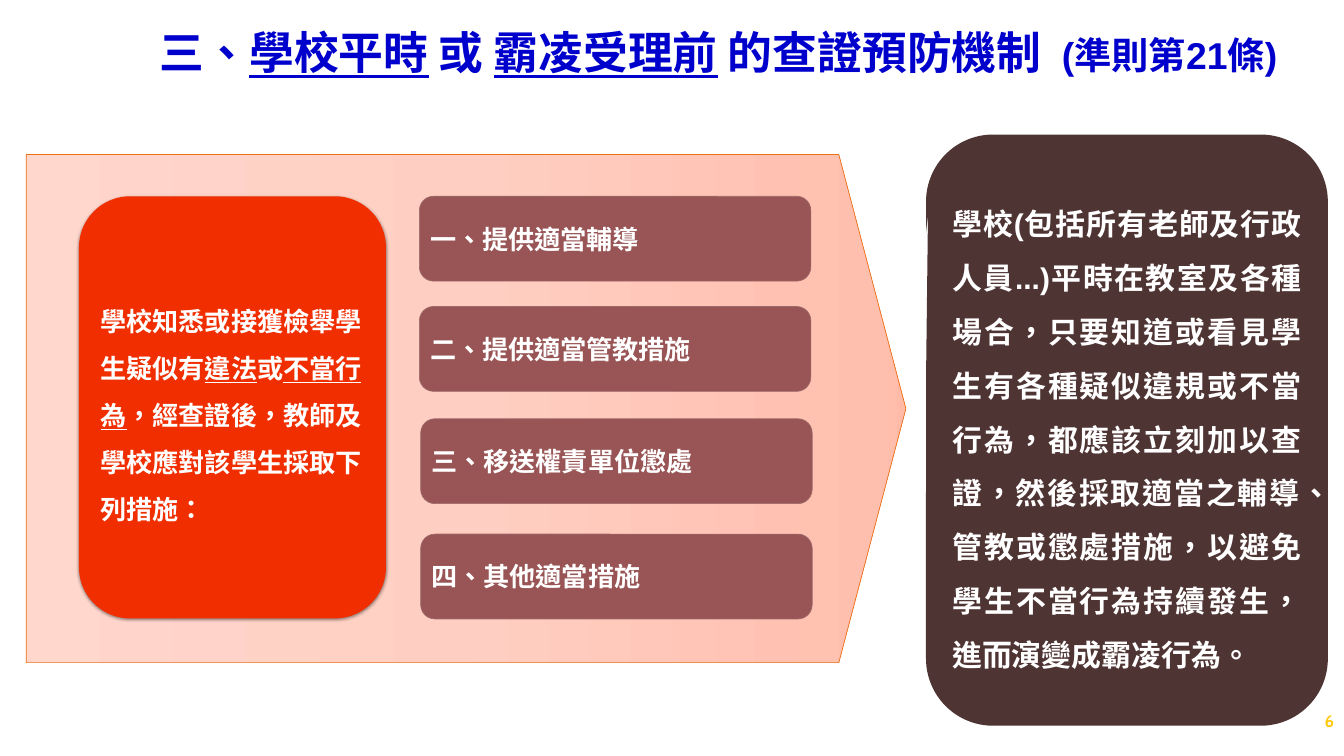
from pptx import Presentation
from pptx.dml.color import RGBColor as RGB
from pptx.enum.lang import MSO_LANGUAGE_ID as LANG
from pptx.enum.shapes import MSO_SHAPE as SHAPE
from pptx.enum.text import MSO_ANCHOR as ANCHOR, PP_ALIGN as ALIGN
from pptx.oxml import parse_xml
from pptx.oxml.ns import nsdecls
from pptx.util import Inches, Pt

WIDE, HIGH = 20, 11.25
WHITE = RGB(0xFF, 0xFF, 0xFF)
BLUE = RGB(0x00, 0x00, 0xCC)
GOLD = RGB(0xFF, 0xCA, 0x08)
ORANGE = RGB(0xEC, 0x70, 0x16)
RED = RGB(0xF0, 0x2E, 0x00)
ROSE = RGB(0x99, 0x55, 0x55)
EDGE = RGB(0x9C, 0x6A, 0x6A)
BROWN = RGB(0x4F, 0x34, 0x34)
PINKS = [(0, RGB(0xFF, 0xD7, 0xCD)), (50, RGB(0xFF, 0xCE, 0xC2)),
         (97, RGB(0xFF, 0xBF, 0xAE)), (100, RGB(0xFF, 0xBB, 0xA8))]

STEPS = ["一、提供適當輔導", "二、提供適當管教措施",
         "三、移送權責單位懲處", "四、其他適當措施"]


def part(box, x, y, w, h):
    """Return the box at the given shares of another box."""
    left, top, wide, high = box
    return left + x * wide, top + y * high, w * wide, h * high


def write(shape, runs, size=28, font="Cabin", color=WHITE,
          align=ALIGN.LEFT, space=None, before=0):
    """Fill a shape with one paragraph; a run is (text, own format)."""
    frame = shape.text_frame
    frame.word_wrap = True
    frame.vertical_anchor = ANCHOR.MIDDLE
    para = frame.paragraphs[0]
    para.alignment = align
    para.line_spacing = space
    para.space_before = Pt(before)
    for text, own in runs:
        run = para.add_run()
        run.text = text
        face = run.font
        face.name, face.bold = font, True
        face.size = Pt(own.get("size", size))
        face.underline = own.get("under", False)
        face.color.rgb = color
        face.language_id = LANG.TRADITIONAL_CHINESE


def add_text(slide, box, runs, **form):
    write(slide.shapes.add_textbox(*map(Inches, box)), runs, **form)


def add_box(slide, kind, box, fill=None, line=None, adjust=()):
    shape = slide.shapes.add_shape(kind, *map(Inches, box))
    shape.shadow.inherit = False
    for i, value in enumerate(adjust):
        shape.adjustments[i] = value
    if fill is not None:
        shape.fill.solid()
        shape.fill.fore_color.rgb = fill
    if line is None:
        shape.line.fill.background()
    else:
        shape.line.color.rgb = line
        shape.line.width = Pt(0.75)
    return shape


def shade(shape, stops):
    """Give a shape a gradient that runs from left to right."""
    shape.fill.gradient()
    shape.fill.gradient_angle = 0
    group = shape.fill._fill._gradFill.find(".//{*}gsLst")
    for old in list(group):
        group.remove(old)
    for pos, color in stops:
        group.append(parse_xml(
            f'<a:gs {nsdecls("a")} pos="{pos * 1000}">'
            f'<a:srgbClr val="{color}"/></a:gs>'))


def cast(shape):
    """Drop a soft shadow straight below a shape."""
    effect = shape._element.spPr.find("{*}effectLst")
    effect.append(parse_xml(
        f'<a:outerShdw {nsdecls("a")} blurRad="{Pt(3.5)}" dist="{Pt(1.1)}" '
        'dir="5400000" rotWithShape="0"><a:srgbClr val="000000">'
        '<a:alpha val="45000"/></a:srgbClr></a:outerShdw>'))


def add_title(slide, box):
    under = {"under": True}
    add_text(slide, box, [
        ("三、", {}), ("學校平時", under), (" 或 ", {}),
        ("霸凌受理前", under), (" 的查證預防機制  ", {}),
        ("(準則第21條)", {"size": 40})],
        size=48, font="Arial", color=BLUE, space=0.9)


def add_flow(slide, box):
    # Arrow behind the cause and the four steps
    arrow = add_box(slide, SHAPE.PENTAGON, box, line=ORANGE, adjust=[0.132])
    shade(arrow, PINKS)

    # Cause
    cause = add_box(slide, SHAPE.ROUNDED_RECTANGLE,
                    part(box, 0.06, 0.082, 0.349, 0.831), RED)
    cast(cause)
    under = {"under": True}
    write(cause, [
        ("學校知悉或接獲檢舉學生疑似有", {}), ("違法", under), ("或", {}),
        ("不當行為", under),
        ("，經查證後，教師及學校應對該學生採取下列措施：", {})], space=1.5)

    # Steps, the lower pair set slightly to the right
    spots = [(0.447, 0.082), (0.447, 0.299), (0.4485, 0.52), (0.4485, 0.747)]
    for text, (x, y) in zip(STEPS, spots):
        step = add_box(slide, SHAPE.ROUNDED_RECTANGLE,
                       part(box, x, y, 0.445, 0.167), ROSE, EDGE)
        write(step, [(text, {})])


def add_note(slide, box):
    note = add_box(slide, SHAPE.ROUNDED_RECTANGULAR_CALLOUT, box, BROWN,
                   adjust=[-0.495, -0.367, 0.167])
    write(note, [(
        "學校(包括所有老師及行政人員...)平時在教室及各種場合，"
        "只要知道或看見學生有各種疑似違規或不當行為，都應該立刻加以查證，"
        "然後採取適當之輔導、管教或懲處措施，以避免學生不當行為持續發生，"
        "進而演變成霸凌行為。", {})],
        size=32, font="Arial", align=ALIGN.JUSTIFY, space=1.5, before=12)


def main():
    deck = Presentation()
    deck.slide_width, deck.slide_height = Inches(WIDE), Inches(HIGH)
    slide = deck.slides.add_slide(deck.slide_layouts[6])
    page = (0, 0, WIDE, HIGH)
    add_text(slide, part(page, 0.872, 0.927, 0.1255, 0.053), [("6", {})],
             size=18, color=GOLD, align=ALIGN.RIGHT)
    add_title(slide, part(page, 0.114, 0.01, 0.8585, 0.126))
    add_flow(slide, part(page, 0.0195, 0.2045, 0.6545, 0.672))
    add_note(slide, part(page, 0.689, 0.178, 0.299, 0.782))
    deck.save("out.pptx")


if __name__ == "__main__":
    main()
